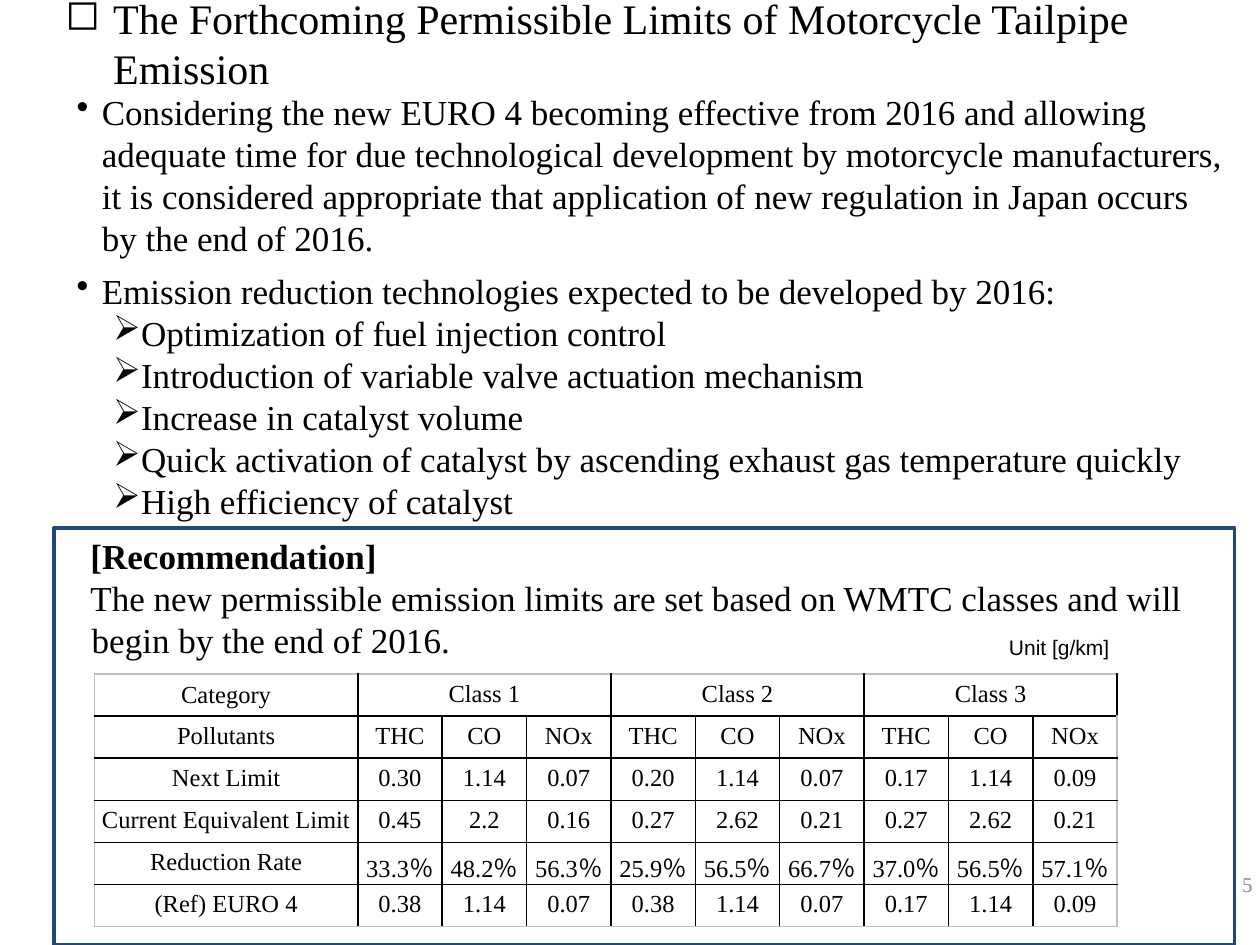
from lxml.etree import SubElement
from pptx import Presentation
from pptx.dml.color import RGBColor
from pptx.enum.shapes import MSO_SHAPE
from pptx.enum.text import MSO_ANCHOR, PP_ALIGN
from pptx.oxml import parse_xml
from pptx.oxml.ns import nsdecls, qn
from pptx.util import Inches, Pt

BLACK, NAVY, GRAY, PALE = "000000", "1F497D", "8C8C8C", "BFBFBF"

INTRO = (
    "Considering the new EURO 4 becoming effective from 2016 and allowing "
    "adequate time for due technological development by motorcycle "
    "manufacturers, it is considered appropriate that application of new "
    "regulation in Japan occurs by the end of 2016."
)
TECHS = [
    "Optimization of fuel injection control",
    "Introduction of variable valve actuation mechanism",
    "Increase in catalyst volume",
    "Quick activation of catalyst by ascending exhaust gas temperature quickly",
    "High efficiency of catalyst",
]
LIMITS = [
    ["Category", "Class 1", "", "", "Class 2", "", "", "Class 3", "", ""],
    ["Pollutants"] + ["THC", "CO", "NOx"] * 3,
    ["Next Limit", "0.30", "1.14", "0.07", "0.20", "1.14", "0.07",
     "0.17", "1.14", "0.09"],
    ["Current Equivalent Limit", "0.45", "2.2", "0.16", "0.27", "2.62",
     "0.21", "0.27", "2.62", "0.21"],
    ["Reduction Rate", "33.3％", "48.2％", "56.3％", "25.9％", "56.5％",
     "66.7％", "37.0％", "56.5％", "57.1％"],
    ["(Ref) EURO 4", "0.38", "1.14", "0.07", "0.38", "1.14", "0.07",
     "0.17", "1.14", "0.09"],
]


def color(code):
    return RGBColor.from_string(code)


def write(frame, text, size=20, font="Times New Roman", ink=BLACK, bold=False,
          align=PP_ALIGN.LEFT, left=0, hang=0, before=0, bullet=None):
    """Fill the empty first paragraph, or add one below the others."""
    para = frame.paragraphs[0]
    if para.runs:
        para = frame.add_paragraph()
    para.alignment = align
    para.space_before = Pt(before)
    props = para._p.get_or_add_pPr()
    props.set("marL", str(Inches(left)))
    props.set("indent", str(Inches(hang)))
    if bullet:
        SubElement(props, qn("a:buChar")).set("char", bullet)
    run = para.add_run()
    run.text = text
    run.font.size = Pt(size)
    run.font.name = font
    run.font.bold = bold
    run.font.color.rgb = color(ink)


def edge(cell, sides):
    """Draw the cell borders, given as a dict of side to colour."""
    props = cell._tc.get_or_add_tcPr()
    for at, (side, ink) in enumerate(sides.items()):
        props.insert(at, parse_xml(
            f'<a:ln{side} {nsdecls("a")} w="{Pt(1)}"><a:solidFill>'
            f'<a:srgbClr val="{ink}"/></a:solidFill></a:ln{side}>'))


class Page:
    def __init__(self, deck):
        self.slide = deck.slides.add_slide(deck.slide_layouts[6])

    def text(self, *box, anchor=MSO_ANCHOR.TOP):
        frame = self.slide.shapes.add_textbox(*map(Inches, box)).text_frame
        frame.word_wrap = True
        frame.vertical_anchor = anchor
        return frame

    def panel(self, *box):
        shape = self.slide.shapes.add_shape(
            MSO_SHAPE.RECTANGLE, *map(Inches, box))
        shape.shadow.inherit = False
        shape.fill.background()
        shape.line.color.rgb = color(NAVY)
        shape.line.width = Pt(2)
        shape.text_frame.word_wrap = True
        shape.text_frame.vertical_anchor = MSO_ANCHOR.TOP
        return shape.text_frame

    def table(self, rows, widths, *box):
        table = self.slide.shapes.add_table(
            len(rows), len(widths), *map(Inches, box)).table
        table.first_row = table.horz_banding = False
        for col, width in zip(table.columns, widths):
            col.width = Inches(width)
        last_row, last_col = len(rows) - 1, len(widths) - 1
        for r, row in enumerate(rows):
            for c, text in enumerate(row):
                cell = table.cell(r, c)
                cell.fill.background()
                edge(cell, {"L": BLACK if c else PALE,
                            "R": BLACK if c < last_col else PALE,
                            "T": BLACK if r else PALE,
                            "B": BLACK if r < last_row else PALE})
                cell.margin_left = cell.margin_right = Inches(
                    0.1 if r < 2 else 0)
                if text:
                    write(cell.text_frame, text, size=14,
                          align=PP_ALIGN.CENTER)
        table.cell(0, 0).vertical_anchor = MSO_ANCHOR.MIDDLE
        for c in range(1, len(widths), 3):
            table.cell(0, c).merge(table.cell(0, c + 2))


def main():
    deck = Presentation()
    deck.slide_width, deck.slide_height = Inches(10), Inches(7.5)
    page = Page(deck)

    title = page.text(0.42, -0.11, 9.23, 0.91)
    write(title, "The Forthcoming Permissible Limits of Motorcycle Tailpipe "
          "Emission", size=24, left=0.38, hang=-0.38, bullet="◻")

    body = page.text(0.51, 0.67, 9.32, 3.55)
    write(body, INTRO, left=0.2, hang=-0.2, bullet="•")
    write(body, "Emission reduction technologies expected to be developed "
          "by 2016:", left=0.2, hang=-0.2, before=6, bullet="•")
    for tech in TECHS:
        write(body, tech, left=0.49, hang=-0.2, bullet="➢")

    advice = page.panel(0.43, 4.19, 9.37, 3.31)
    write(advice, "[Recommendation]", bold=True, left=0.2, hang=-0.01)
    write(advice, "The new permissible emission limits are set based on WMTC "
          "classes and will begin by the end of 2016.", left=0.2, hang=-0.01)

    page.table(LIMITS, [2.09] + [0.67] * 9, 0.75, 5.35, 8.12, 2)

    unit = page.text(7.91, 4.99, 1.34, 0.3)
    write(unit, "Unit [g/km]", size=12, font="Arial")
    number = page.text(7.71, 6.82, 2.33, 0.4, anchor=MSO_ANCHOR.MIDDLE)
    write(number, "5", size=12, ink=GRAY, align=PP_ALIGN.RIGHT)

    deck.save("out.pptx")


if __name__ == "__main__":
    main()
